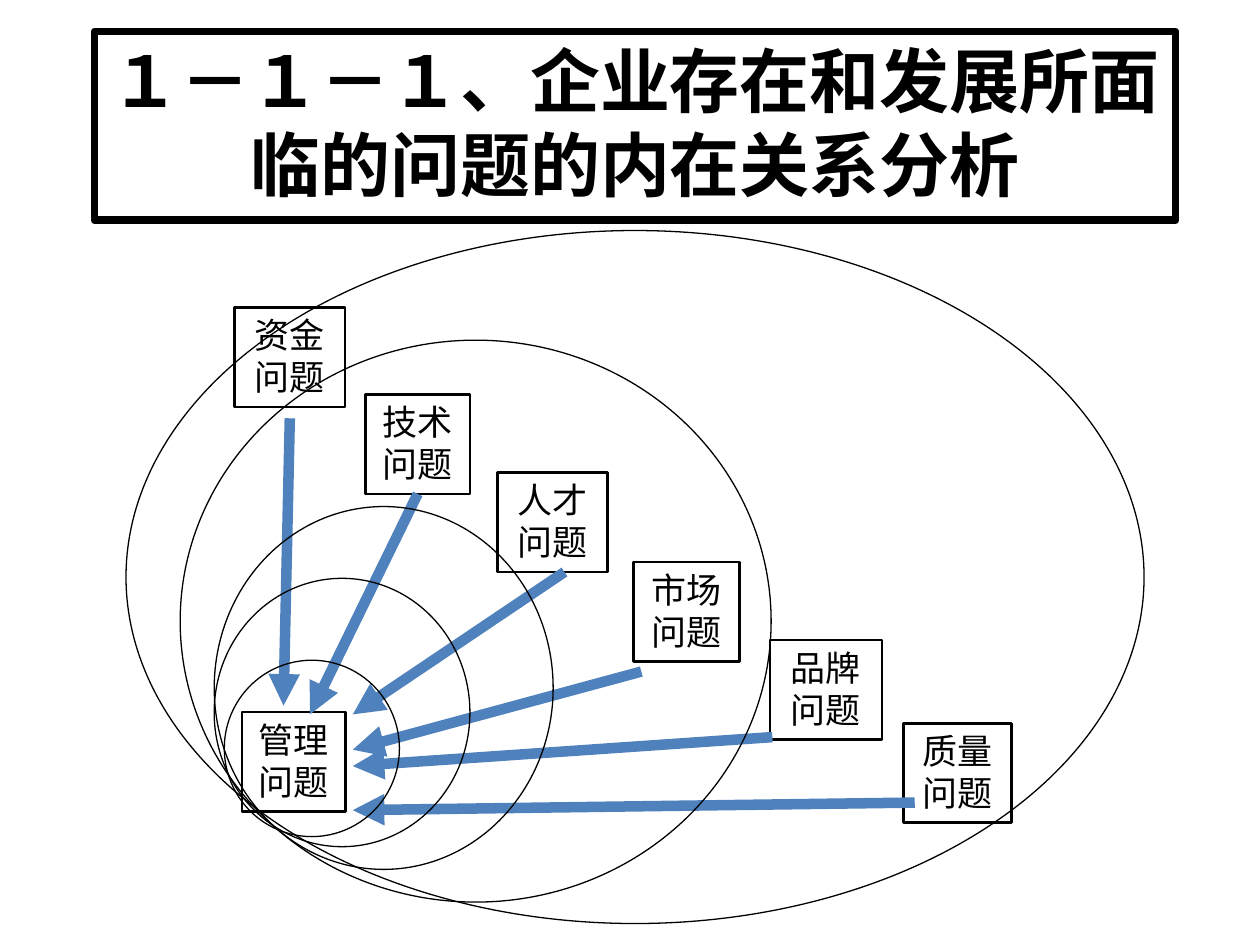
import pptx
import pptx.dml.color
import pptx.enum.shapes
import pptx.enum.text
import pptx.oxml
import pptx.oxml.ns
import pptx.util
from pptx.util import Inches

SHAPES = pptx.enum.shapes.MSO_SHAPE


def color(hex_string):
    return pptx.dml.color.RGBColor.from_string(hex_string)


class Diagram:
    """Holds the style and the slide being drawn."""
    font = "Times New Roman"
    ink = "000000"
    arrow_color = "4F81BD"

    def __init__(self, slide):
        self.slide = slide

    def outline(self, kind, left, top, width, height, weight):
        """Add an unfilled shape with a black outline."""
        shape = self.slide.shapes.add_shape(
            kind, Inches(left), Inches(top), Inches(width), Inches(height))
        shape.shadow.inherit = False
        shape.fill.background()
        shape.line.color.rgb = color(self.ink)
        shape.line.width = pptx.util.Pt(weight)
        return shape

    def ellipse(self, left, top, width, height):
        return self.outline(SHAPES.OVAL, left, top, width, height, 0.75)

    def box(self, text, left, top, width, height=0.79, size=20, weight=1.5, bold=False):
        shape = self.outline(SHAPES.RECTANGLE, left, top, width, height, weight)
        frame = shape.text_frame
        frame.word_wrap = True
        frame.auto_size = pptx.enum.text.MSO_AUTO_SIZE.SHAPE_TO_FIT_TEXT
        frame.vertical_anchor = pptx.enum.text.MSO_ANCHOR.TOP
        paragraph = frame.paragraphs[0]
        paragraph.alignment = pptx.enum.text.PP_ALIGN.CENTER
        run = paragraph.add_run()
        run.text = text
        run.font.name = self.font
        run.font.size = pptx.util.Pt(size)
        run.font.bold = bold
        run.font.color.rgb = color(self.ink)
        return shape

    def arrow(self, start, end):
        connector = self.slide.shapes.add_connector(
            pptx.enum.shapes.MSO_CONNECTOR.STRAIGHT,
            *(Inches(value) for value in (*start, *end)))
        connector.line.color.rgb = color(self.arrow_color)
        connector.line.width = pptx.util.Pt(6)
        head = pptx.oxml.parse_xml(
            f'<a:tailEnd {pptx.oxml.ns.nsdecls("a")} type="triangle"/>')
        connector.line._get_or_add_ln().append(head)
        effects = pptx.oxml.parse_xml(f'<a:effectLst {pptx.oxml.ns.nsdecls("a")}/>')
        connector._element.spPr.append(effects)
        return connector


def main():
    presentation = pptx.Presentation()
    presentation.slide_width = Inches(10)
    presentation.slide_height = Inches(7.5)
    diagram = Diagram(presentation.slides.add_slide(presentation.slide_layouts[6]))

    diagram.box("１－１－１、企业存在和发展所面临的问题的内在关系分析",
                0.75, 0.25, 8.58, height=1.5, size=40, weight=4.5, bold=True)

    # Topic, left, top and width of its box, then arrow start and end
    problems = [
        ("资金", 1.86, 2.44, 0.88, (2.3, 3.32), (2.25, 5.6)),
        ("技术", 2.9, 3.13, 0.83, (3.35, 3.93), (2.46, 5.67)),
        ("人才", 3.95, 3.75, 0.87, (4.48, 4.54), (2.8, 5.67)),
        ("市场", 5.03, 4.46, 0.84, (5.09, 5.33), (2.8, 5.95)),
        ("品牌", 6.11, 5.08, 0.89, (6.13, 5.85), (2.8, 6.08)),
        ("质量", 7.17, 5.74, 0.86, (7.26, 6.37), (2.8, 6.43)),
    ]
    diagram.box("管理问题", 1.92, 5.65, 0.82)
    boxes = {topic: diagram.box(topic + "问题", left, top, width)
             for topic, left, top, width, _, _ in problems}
    arrows = {topic: diagram.arrow(start, end)
              for topic, _, _, _, start, end in problems}
    arrows["技术"].begin_connect(boxes["技术"], 2)

    for bounds in [(1.78, 5.24, 1.39, 1.4), (1.7, 4.59, 2.03, 2.13),
                   (1.7, 4.02, 2.69, 2.88), (1.43, 2.7, 4.69, 4.46),
                   (1, 1.83, 8.08, 5.5)]:
        diagram.ellipse(*bounds)

    presentation.save("out.pptx")


if __name__ == "__main__":
    main()
